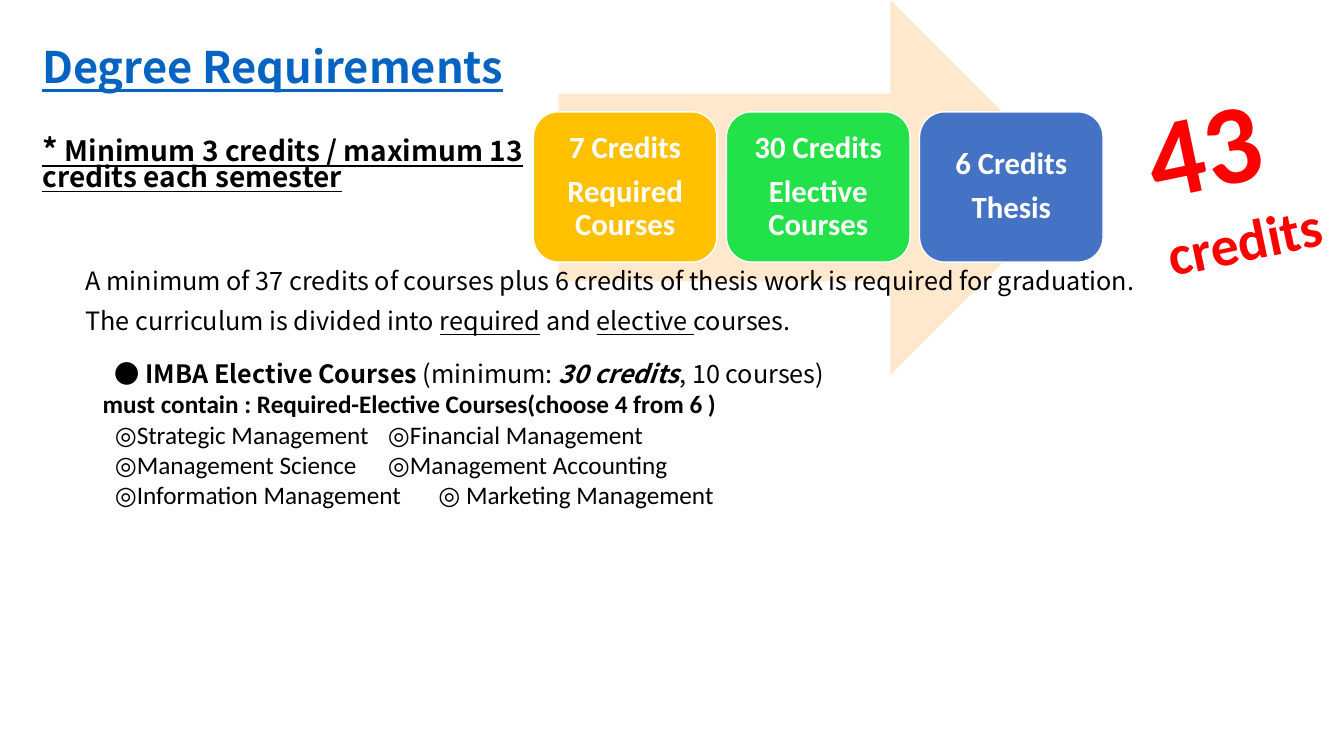
from lxml import etree
from pptx import Presentation
from pptx.dml.color import RGBColor
from pptx.enum.shapes import MSO_SHAPE
from pptx.enum.text import MSO_ANCHOR, MSO_AUTO_SIZE, PP_ALIGN
from pptx.oxml.ns import qn
from pptx.util import Emu, Inches, Pt

ARROW, CARD = MSO_SHAPE.RIGHT_ARROW, MSO_SHAPE.ROUNDED_RECTANGLE
TOP, MIDDLE = MSO_ANCHOR.TOP, MSO_ANCHOR.MIDDLE
LEFT, CENTER = PP_ALIGN.LEFT, PP_ALIGN.CENTER
NO_FIT = MSO_AUTO_SIZE.NONE
SANS, LATIN = "Noto Sans CJK SC", "Calibri"


def style(font, face, size, color, bold=False):
    """Set the face, size, colour and weight of a paragraph or run font."""
    font.name, font.size, font.bold = face, Pt(size), bold
    font.color.rgb = RGBColor.from_string(color)


def add_runs(paragraph, pieces):
    """Add (text, marks) pieces; marks may hold b, i and u."""
    for text, marks in pieces:
        run = paragraph.add_run()
        run.text = text
        for mark, attribute in (("b", "bold"), ("i", "italic"), ("u", "underline")):
            if mark in marks:
                setattr(run.font, attribute, True)


prs = Presentation()
prs.slide_width, prs.slide_height = Inches(13.33), Inches(7.5)
slide = prs.slides.add_slide(prs.slide_layouts[5])
shapes = slide.shapes

# Title and semester limits
title = shapes.title
title.left, title.top, title.width, title.height = map(Inches, (0.32, 0.41, 5.6, 1.9))
heading = title.text_frame
heading.auto_size, heading.word_wrap, heading.vertical_anchor = NO_FIT, True, TOP
heading.text = "Degree Requirements"
name = heading.paragraphs[0]
name.line_spacing = 0.9
style(name.font, SANS, 31, "0563C1", True)
limits = heading.add_paragraph()
add_runs(limits, [("* ", ""), ("Minimum 3 credits / maximum 13 credits each semester", "")])
limits.line_spacing, limits.space_before = 0.75, Pt(33)
style(limits.font, SANS, 20, "000000", True)
limits.runs[0].font.size = Pt(22)
for paragraph in heading.paragraphs:
    paragraph.alignment = LEFT
    paragraph.font.underline = True

# Total credits
total = shapes.add_textbox(*map(Inches, (11.33, 0.63, 2.13, 2.12)))
total.rotation = 348.2
total.text_frame.word_wrap = True
total_line = total.text_frame.paragraphs[0]
add_runs(total_line, [("43", ""), (" credits", "")])
style(total_line.font, LATIN, 40, "FF0000", True)
total_line.runs[0].font.size = Pt(80)

# Arrow with one card per group of credits
arrow = shapes.add_shape(ARROW, *map(Inches, (5.54, 0, 5.15, 3.72)))
arrow.shadow.inherit = False
arrow.fill.solid()
arrow.fill.fore_color.rgb = RGBColor.from_string("FFE8CC")
arrow.line.fill.background()

CARD_LEFT, CARD_STEP = 5.29, 1.915
credit_groups = [
    ("7 Credits", "Required Courses", "FFC000"),
    ("30 Credits", "Elective Courses", "23E148"),
    ("6 Credits", "Thesis", "4472C4"),
]
for column, (amount, group, color) in enumerate(credit_groups):
    card = shapes.add_shape(CARD, Inches(CARD_LEFT + column * CARD_STEP),
                            Inches(1.11), Inches(1.82), Inches(1.49))
    card.shadow.inherit = False
    card.fill.solid()
    card.fill.fore_color.rgb = RGBColor.from_string(color)
    card.line.color.rgb = RGBColor.from_string("FFFFFF")
    card.line.width = Pt(1)
    label = card.text_frame
    label.word_wrap, label.vertical_anchor = True, MIDDLE
    label.margin_left = label.margin_right = Inches(0.1)
    label.text = f"{amount}\n{group}"
    for paragraph in label.paragraphs:
        paragraph.alignment, paragraph.line_spacing = CENTER, 0.9
        style(paragraph.font, LATIN, 22, "FFFFFF", True)
    label.paragraphs[1].space_before = Pt(7.7)

# Rules: pieces, font, space before (points), first-line indent (inches)
INDENT, SECOND_COLUMN = 0.29, 3.59
rules = [
    ([("A minimum of 37 credits of courses plus 6 credits of thesis work "
       "is required for graduation.", "")], SANS, 0, 0),
    ([("The curriculum is divided into ", ""), ("required", "u"), (" and ", ""),
      ("elective ", "u"), ("courses.", "")], SANS, 7.5, 0),
    ([("● ", ""), ("IMBA Elective Courses ", "b"), ("(minimum: ", ""),
      ("30 credits", "bi"), (", 10 courses)", "")], SANS, 16, INDENT),
    ([("must contain : Required-Elective Courses(choose 4 from 6 )", "b")], LATIN, 0, 0.17),
]
course_pairs = [
    ("◎Strategic Management", "◎Financial Management"),
    ("◎Management Science", "◎Management Accounting"),
    ("◎Information Management", "◎ Marketing Management"),
]
rules += [([("\t".join(pair), "")], LATIN, 0, INDENT) for pair in course_pairs]

body = shapes.add_textbox(*map(Inches, (0.75, 2.58, 10.64, 4.04))).text_frame
body.word_wrap = True
for number, (pieces, face, gap, indent) in enumerate(rules):
    paragraph = body.add_paragraph() if number else body.paragraphs[0]
    add_runs(paragraph, pieces)
    if gap:
        paragraph.space_before = Pt(gap)
    properties = paragraph._p.get_or_add_pPr()
    properties.set("marL", "0")
    properties.set("indent", str(Emu(Inches(indent))))
    if "\t" in pieces[0][0]:
        tabs = etree.SubElement(properties, qn("a:tabLst"))
        etree.SubElement(tabs, qn("a:tab"), pos=str(Inches(SECOND_COLUMN)), algn="l")
    style(paragraph.font, face, 18, "000000")

prs.save("out.pptx")
